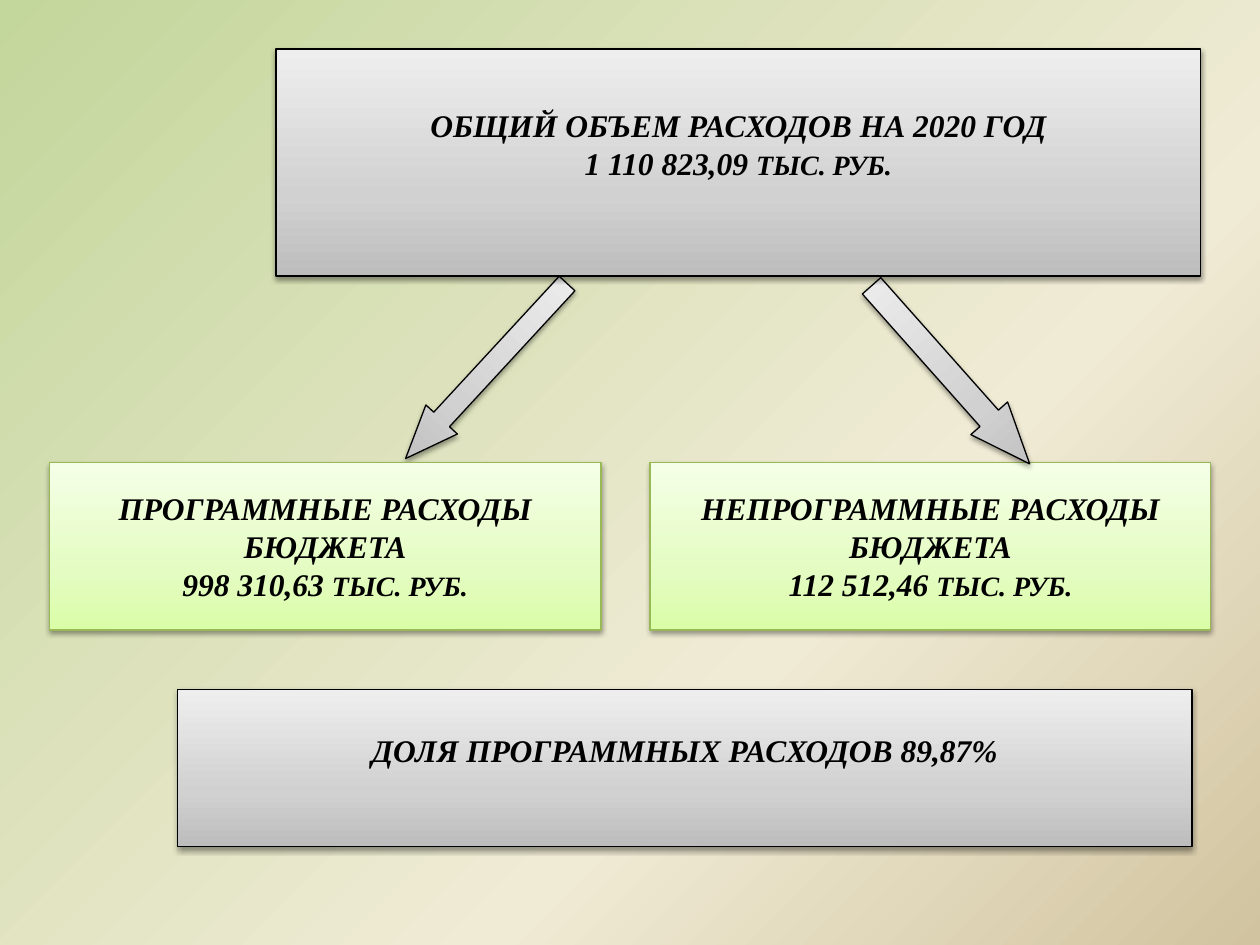
import copy

import lxml.etree
import pptx
import pptx.dml.color
import pptx.enum.shapes
import pptx.enum.text
import pptx.oxml.ns
import pptx.util

RGB = pptx.dml.color.RGBColor
KIND = pptx.enum.shapes.MSO_SHAPE
Inches = pptx.util.Inches
Pt = pptx.util.Pt
qn = pptx.oxml.ns.qn

BLACK = RGB(0x00, 0x00, 0x00)
EDGE = RGB(0x98, 0xB9, 0x55)
GRAY = ((0, RGB(0xBD, 0xBD, 0xBD)), (0.35, RGB(0xD1, 0xD1, 0xD1)), (1, RGB(0xEE, 0xEE, 0xEE)))
GREEN = ((0, RGB(0xDA, 0xFD, 0xA7)), (0.35, RGB(0xE4, 0xFC, 0xC2)), (1, RGB(0xF5, 0xFF, 0xE7)))
SAND = ((0, RGB(0xC3, 0xD6, 0x9B)), (0.65, RGB(0xF0, 0xEB, 0xD5)), (1, RGB(0xD1, 0xC3, 0x9F)))
FONT = "Times New Roman"
UNIT = "ТЫС. РУБ."


def blend(fill, root, stops, angle):
    fill.gradient()
    fill.gradient_angle = angle
    marks = root.find(".//" + qn("a:gsLst"))
    marks.insert(1, copy.deepcopy(marks[0]))
    for mark, (place, color) in zip(fill.gradient_stops, stops):
        mark.position = place
        mark.color.rgb = color


def shade(shape):
    shape.shadow.inherit = False
    effects = shape._element.spPr.find(qn("a:effectLst"))
    outer = lxml.etree.SubElement(
        effects, qn("a:outerShdw"), blurRad=str(Pt(3.1)), dist=str(Pt(1.6)),
        dir="5400000", rotWithShape="0")
    color = lxml.etree.SubElement(outer, qn("a:srgbClr"), val=str(BLACK))
    lxml.etree.SubElement(color, qn("a:alpha"), val="38000")


def draw(slide, kind, box, stops=GRAY, edge=BLACK, turn=0, adjust=()):
    shape = slide.shapes.add_shape(kind, *map(Inches, box))
    for index, value in enumerate(adjust):
        shape.adjustments[index] = value
    shape.rotation = turn
    blend(shape.fill, shape._element.spPr, stops, 90)
    shape.line.color.rgb = edge
    shape.line.width = Pt(0.75)
    shade(shape)
    return shape


def write(para, text, size=18, color=BLACK):
    run = para.add_run()
    run.text = text
    font = run.font
    font.name = FONT
    font.size = Pt(size)
    font.bold = font.italic = True
    font.color.rgb = color


def label(shape, title, amount=None, foot=0.05):
    frame = shape.text_frame
    frame.word_wrap = True
    frame.vertical_anchor = pptx.enum.text.MSO_ANCHOR.MIDDLE
    frame.margin_bottom = Inches(foot)
    write(frame.paragraphs[0], title)
    if amount:
        para = frame.add_paragraph()
        write(para, amount + " ")
        write(para, UNIT, size=16)
    for para in frame.paragraphs:
        para.alignment = pptx.enum.text.PP_ALIGN.CENTER


def arrow(slide, box, turn):
    draw(slide, KIND.DOWN_ARROW, box, turn=turn, adjust=(0.5, 1.24))


def part(slide, left, width, title, amount):
    shape = draw(slide, KIND.ROUNDED_RECTANGLE, (left, 3.67, width, 1.33),
                 stops=GREEN, edge=EDGE, adjust=(0,))
    label(shape, title, amount)


def panel(slide, box, title, amount=None):
    label(draw(slide, KIND.RECTANGLE, box), title, amount, foot=0.34)


def main():
    deck = pptx.Presentation()
    deck.slide_width, deck.slide_height = Inches(10), Inches(7.5)
    slide = deck.slides.add_slide(deck.slide_layouts[6])
    blend(slide.background.fill, slide._element, SAND, 315)

    arrow(slide, (3.69, 2, 0.34, 1.89), 42.7)
    part(slide, 0.39, 4.38, "ПРОГРАММНЫЕ РАСХОДЫ БЮДЖЕТА", "998 310,63")
    part(slide, 5.16, 4.45, "НЕПРОГРАММНЫЕ РАСХОДЫ БЮДЖЕТА", "112 512,46")
    arrow(slide, (7.35, 2.03, 0.39, 1.89), 318.4)
    panel(slide, (2.19, 0.39, 7.34, 1.8),
          "ОБЩИЙ ОБЪЕМ РАСХОДОВ НА 2020 ГОД", "1 110 823,09")
    panel(slide, (1.41, 5.47, 8.05, 1.25), "ДОЛЯ ПРОГРАММНЫХ РАСХОДОВ 89,87%")
    deck.save("out.pptx")


if __name__ == "__main__":
    main()
